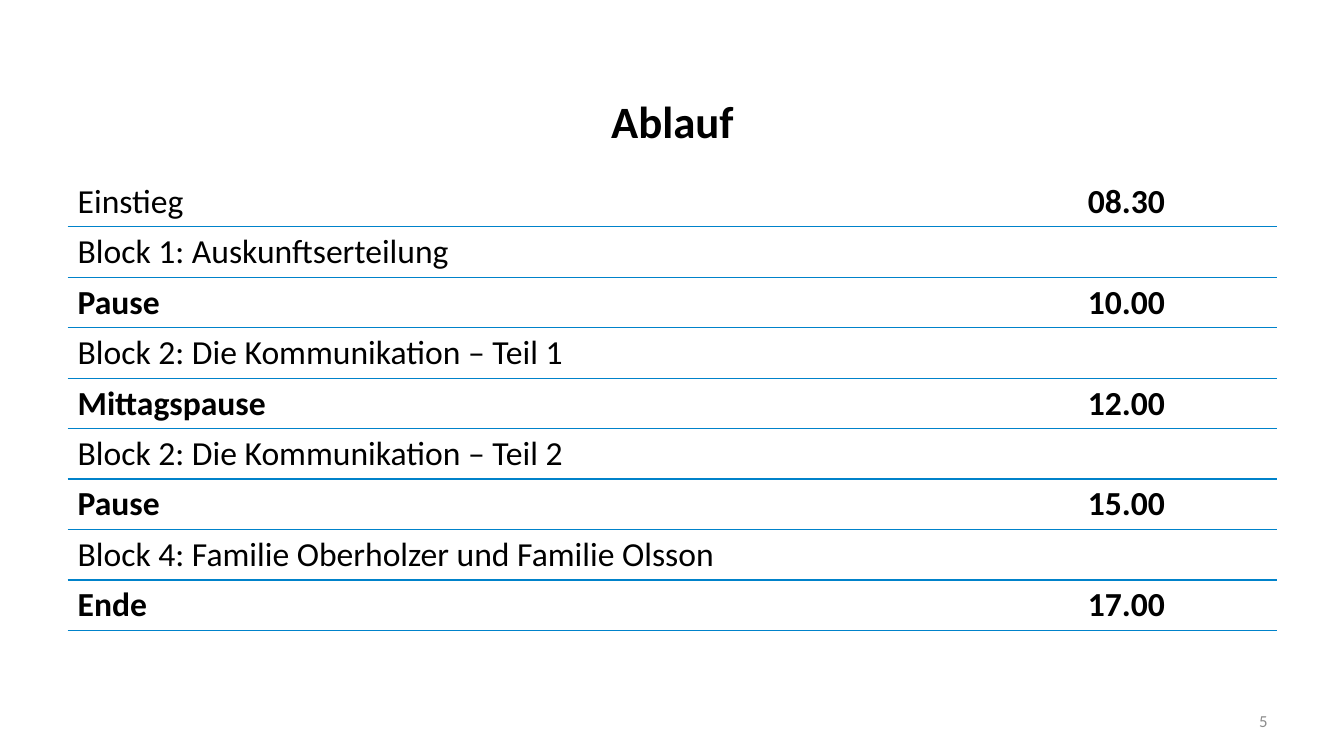
"""Build the day schedule slide with a two-column timetable."""
from lxml import etree
from pptx import Presentation
from pptx import util as u
from pptx.dml.color import RGBColor
from pptx.enum import text
from pptx.oxml.ns import qn

COLORS = {"text": "000000", "rule": "0082CA", "number": "8C8C8C"}
SCHEDULE = [
    ("Einstieg", "08.30"),
    ("Block 1: Auskunftserteilung", ""),
    ("Pause", "10.00"),
    ("Block 2: Die Kommunikation – Teil 1", ""),
    ("Mittagspause", "12.00"),
    ("Block 2: Die Kommunikation – Teil 2", ""),
    ("Pause", "15.00"),
    ("Block 4: Familie Oberholzer und Familie Olsson", ""),
    ("Ende", "17.00"),
]


def write(tf, content, size=24, color="text", bold=False, align=text.PP_ALIGN.LEFT):
    tf.word_wrap = True
    tf.vertical_anchor = text.MSO_ANCHOR.MIDDLE
    p = tf.paragraphs[0]
    p.alignment = align
    r = p.add_run()
    r.text = content
    r.font.name = "Calibri"
    r.font.size = u.Pt(size)
    r.font.bold = bold
    r.font.color.rgb = RGBColor.from_string(COLORS[color])


def add_rule(cell, side, color=None):
    ln = etree.SubElement(cell._tc.get_or_add_tcPr(), qn(f"a:{side}"), w=str(u.Pt(1)))
    if color:
        fill = etree.SubElement(ln, qn("a:solidFill"))
        etree.SubElement(fill, qn("a:srgbClr"), val=COLORS[color])
    else:
        etree.SubElement(ln, qn("a:noFill"))


prs = Presentation()
prs.slide_width = u.Inches(13.33)
prs.slide_height = u.Inches(7.5)
s = prs.slides.add_slide(prs.slide_layouts[6])

title = s.shapes.add_textbox(u.Inches(0.67), u.Inches(0.84), u.Inches(12), u.Inches(0.71))
write(title.text_frame, "Ablauf", size=32, bold=True, align=text.PP_ALIGN.CENTER)

table = s.shapes.add_table(len(SCHEDULE), 2, u.Inches(0.67), u.Inches(1.75),
                           u.Inches(12), u.Inches(4.5)).table
table.first_row = False
table.horz_banding = False
table.columns[0].width = u.Inches(10.02)
table.columns[1].width = u.Inches(1.98)

for row, (topic, time) in enumerate(SCHEDULE):
    bold_topic = bool(time) and row > 0
    for col, (content, bold) in enumerate([(topic, bold_topic), (time, True)]):
        cell = table.cell(row, col)
        if content:
            write(cell.text_frame, content, bold=bold)
        add_rule(cell, "lnL")
        add_rule(cell, "lnR")
        add_rule(cell, "lnT", "rule" if row else None)
        add_rule(cell, "lnB", "rule")
        cell.fill.background()

number = s.shapes.add_textbox(u.Inches(9.56), u.Inches(6.95), u.Inches(3.11), u.Inches(0.4))
write(number.text_frame, "5", size=12, color="number", align=text.PP_ALIGN.RIGHT)

prs.save("out.pptx")
